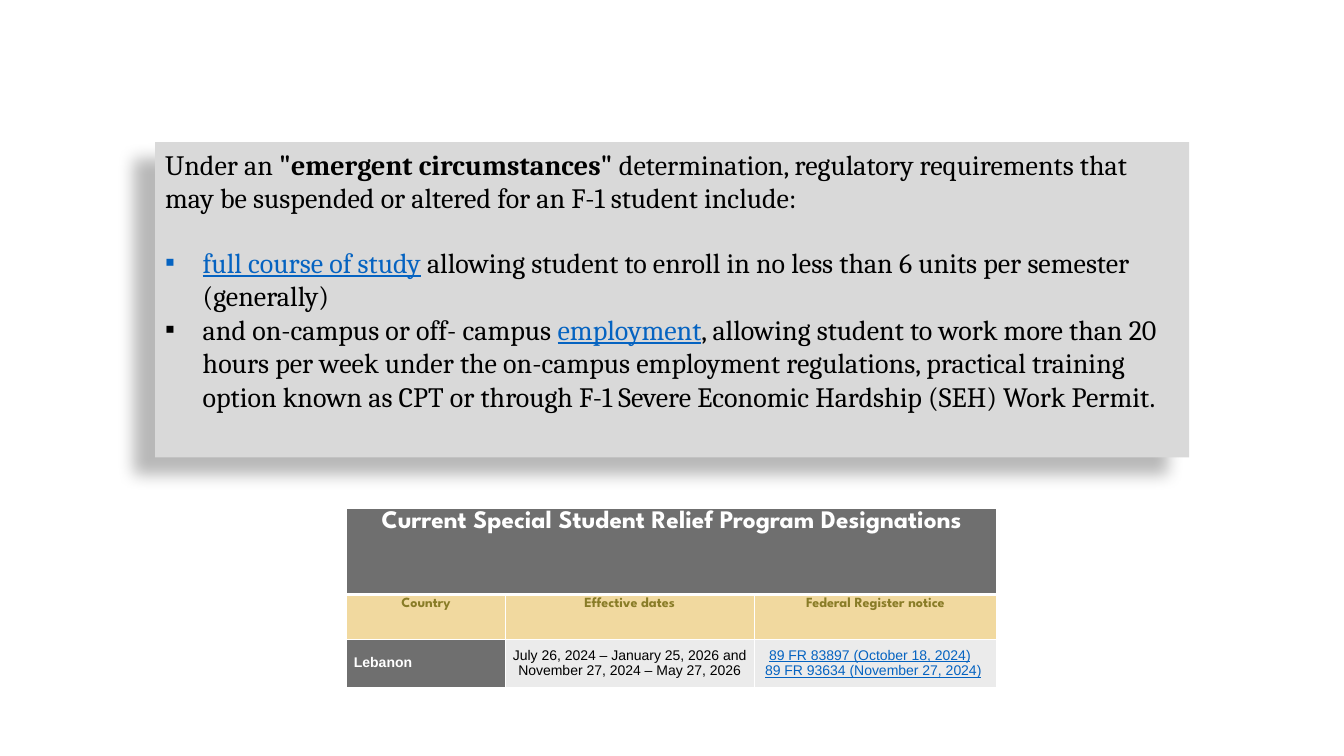
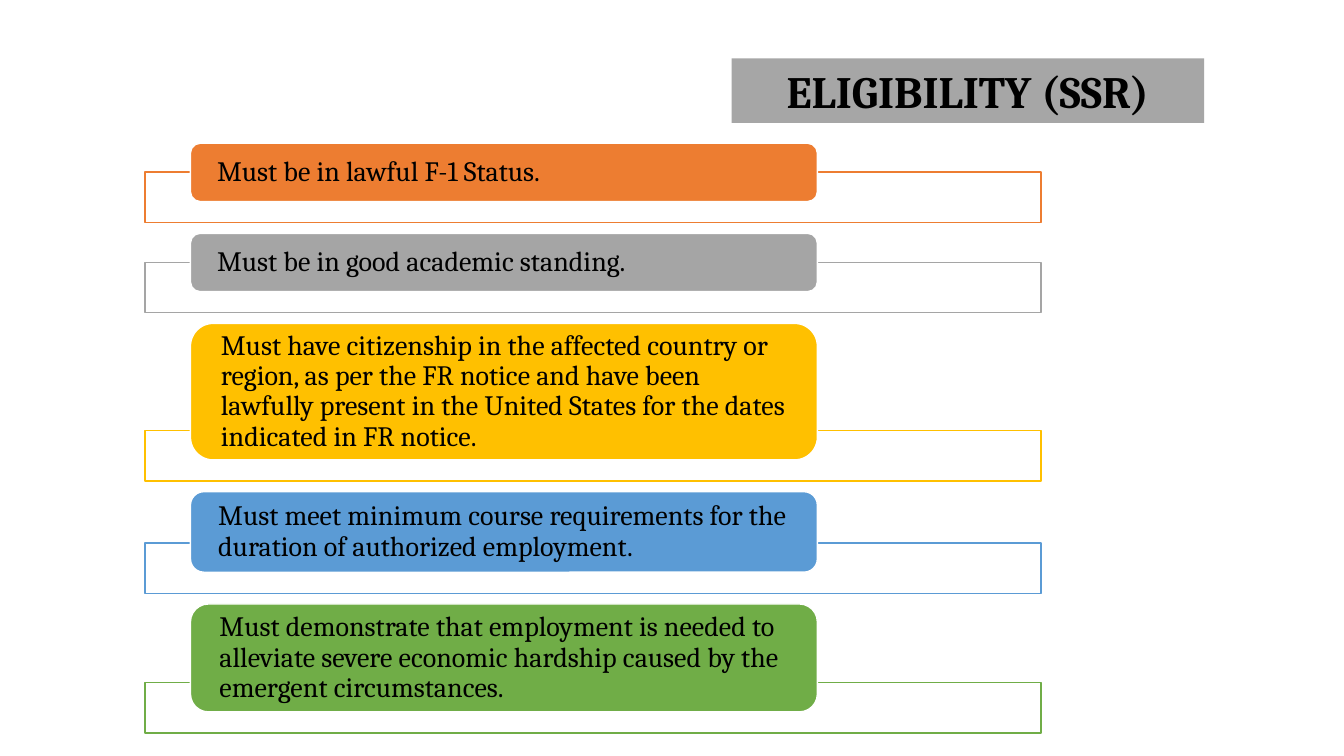
from lxml.etree import SubElement
from pptx import Presentation
from pptx.dml.color import RGBColor
from pptx.enum.shapes import MSO_SHAPE
from pptx.enum.text import MSO_ANCHOR, PP_ALIGN
from pptx.oxml import parse_xml
from pptx.oxml.ns import nsdecls, qn
from pptx.util import Cm, Pt

BLACK = RGBColor(0x00, 0x00, 0x00)
WHITE = RGBColor(0xFF, 0xFF, 0xFF)
LINK = RGBColor(0x05, 0x63, 0xC1)
PANEL = RGBColor(0xD9, 0xD9, 0xD9)
BAND = RGBColor(0xA6, 0xA6, 0xA6)
DARK = RGBColor(0x6F, 0x6F, 0x6F)
SAND = RGBColor(0xF1, 0xD9, 0x9F)
OLIVE = RGBColor(0x89, 0x7C, 0x27)
PALE = RGBColor(0xEB, 0xEB, 0xEB)
ORANGE = RGBColor(0xED, 0x7D, 0x31)
GREY = RGBColor(0xA5, 0xA5, 0xA5)
GOLD = RGBColor(0xFF, 0xC0, 0x00)
BLUE = RGBColor(0x5B, 0x9B, 0xD5)
GREEN = RGBColor(0x70, 0xAD, 0x47)

SERIF, SANS, HEAD = "Cambria", "Arial", "League Spartan"
LEFT, CENTER = PP_ALIGN.LEFT, PP_ALIGN.CENTER
TOP, MIDDLE = MSO_ANCHOR.TOP, MSO_ANCHOR.MIDDLE


class Deck:
    """Holds the deck style and the current slide."""

    def __init__(self):
        self.prs = Presentation()
        self.prs.slide_width, self.prs.slide_height = Cm(33.87), Cm(19.05)
        self.slide = None

    def page(self):
        self.slide = self.prs.slides.add_slide(self.prs.slide_layouts[6])

    def shape(self, kind, x, y, w, h, fill, line=None):
        shape = self.slide.shapes.add_shape(kind, Cm(x), Cm(y), Cm(w), Cm(h))
        shape.shadow.inherit = False
        shape.fill.solid()
        shape.fill.fore_color.rgb = fill
        if line is None:
            shape.line.fill.background()
        else:
            shape.line.color.rgb = line
            shape.line.width = Pt(1)
        return shape

    def shadow(self, shape):
        effects = shape.element.spPr.find(qn("a:effectLst"))
        effects.append(parse_xml(
            f'<a:outerShdw {nsdecls("a")} blurRad="{Pt(11.8)}" dist="{Pt(19.7)}"'
            f' dir="{141 * 60000}" algn="tr" rotWithShape="0">'
            '<a:srgbClr val="000000"><a:alpha val="28000"/></a:srgbClr></a:outerShdw>'))

    def bullet(self, par):
        props = par._p.get_or_add_pPr()
        props.set("marL", str(Cm(0.95)))
        props.set("indent", str(-Cm(0.95)))
        SubElement(props, qn("a:buFont")).set("typeface", SANS)
        SubElement(props, qn("a:buChar")).set("char", "▪")

    def run(self, par, text, size, font, color=BLACK, bold=False, under=False):
        run = par.add_run()
        run.text = text
        run.font.size, run.font.name = Pt(size), font
        run.font.color.rgb = color
        run.font.bold, run.font.underline = bold, under

    def text(self, frame, lines, size, font, align=LEFT):
        frame.word_wrap = True
        pars = []
        for i, runs in enumerate(lines):
            par = frame.add_paragraph() if i else frame.paragraphs[0]
            par.alignment = align
            for words, *look in runs:
                self.run(par, words, size, font, *look)
            pars.append(par)
        return pars

    def panel(self, x, y, w, h, intro, points):
        box = self.shape(MSO_SHAPE.RECTANGLE, x, y, w, h, PANEL)
        self.shadow(box)
        box.text_frame.vertical_anchor = TOP
        first, *rest = self.text(box.text_frame, [intro, *points], 20, SERIF)
        first.space_after = Pt(22)
        for par in rest:
            self.bullet(par)

    def title(self, x, y, w, h, text):
        box = self.shape(MSO_SHAPE.RECTANGLE, x, y, w, h, BAND)
        self.text(box.text_frame, [[(text, BLACK, True)]], 32, SERIF, CENTER)

    def step(self, y, h, color, text):
        self.shape(MSO_SHAPE.RECTANGLE, 3.66, y + h - 0.74, 22.58, 1.27, WHITE, color)
        pill = self.shape(MSO_SHAPE.ROUNDED_RECTANGLE, 4.8, y, 15.8, h, color, WHITE)
        frame = pill.text_frame
        frame.margin_left = frame.margin_right = Cm(0.6)
        frame.margin_top = frame.margin_bottom = 0
        for par in self.text(frame, [[(text,)]], 20, SERIF):
            par.line_spacing = 0.9

    def table(self, x, y, cols, rows):
        frame = self.slide.shapes.add_table(
            len(rows), len(cols), Cm(x), Cm(y), Cm(sum(cols)), Cm(sum(rows)))
        table = frame.table
        table.first_row = table.horz_banding = False
        for col, width in zip(table.columns, cols):
            col.width = Cm(width)
        for row, height in zip(table.rows, rows):
            row.height = Cm(height)
        return table

    def edges(self, cell, top, bottom):
        props = cell._tc.get_or_add_tcPr()
        widths = {"lnL": 0.64, "lnR": 0.64, "lnT": top, "lnB": bottom}
        for i, (side, width) in enumerate(widths.items()):
            props.insert(i, parse_xml(
                f'<a:{side} {nsdecls("a")} w="{Pt(width)}"><a:solidFill>'
                f'<a:srgbClr val="{WHITE}"/></a:solidFill></a:{side}>'))

    def cell(self, cell, fill, lines, size, font, align=CENTER,
             anchor=TOP, top=0.64, bottom=0.64):
        cell.fill.solid()
        cell.fill.fore_color.rgb = fill
        cell.margin_left = cell.margin_right = Cm(0.18)
        cell.margin_top = cell.margin_bottom = Cm(0.08)
        cell.vertical_anchor = anchor
        self.edges(cell, top, bottom)
        return self.text(cell.text_frame, lines, size, font, align)


def relief(deck):
    deck.page()
    deck.panel(
        3.91, 3.58, 26.06, 7.95,
        [("Under an ",), ('"emergent circumstances"', BLACK, True),
         (" determination, regulatory requirements that may be suspended or altered"
          " for an F-1 student include:",)],
        [[("full course of study", LINK, False, True),
          (" allowing student to enroll in no less than 6 units per semester (generally)",)],
         [("and on-campus or off- campus ",), ("employment", LINK, False, True),
          (", allowing student to work more than 20 hours per week under the on-campus"
           " employment regulations, practical training option known as CPT or through"
           " F-1 Severe Economic Hardship (SEH) Work Permit.",)]])

    table = deck.table(8.74, 12.8, [3.99, 6.27, 6.12], [2.18, 1.12, 1.22])
    table.cell(0, 0).merge(table.cell(0, 2))
    deck.cell(table.cell(0, 0), DARK,
              [[("Current Special Student Relief Program Designations", WHITE, True)]],
              18, HEAD, bottom=1.93)
    for i, name in enumerate(["Country", "Effective dates", "Federal Register notice"]):
        deck.cell(table.cell(1, i), SAND, [[(name, OLIVE, True)]], 10, HEAD, top=1.93)
    deck.cell(table.cell(2, 0), DARK, [[("Lebanon", WHITE, True)]], 10, SANS, LEFT, MIDDLE)
    deck.cell(table.cell(2, 1), PALE,
              [[("July 26, 2024 – January 25, 2026 and",)],
               [("November 27, 2024 – May 27, 2026",)]], 10, SANS, CENTER, MIDDLE)
    links = deck.cell(table.cell(2, 2), PALE,
                      [[("89 FR 83897 (October 18, 2024)", LINK, False, True)],
                       [("89 FR 93634 (November 27, 2024)", LINK, False, True)]],
                      10, SANS, LEFT, MIDDLE)
    for par, indent in zip(links, [0.2, 0.1]):
        par._p.get_or_add_pPr().set("marL", str(Cm(indent)))


def rules(deck):
    deck.page()
    deck.title(18.44, 1.47, 11.91, 1.63, "ELIGIBILITY (SSR)")
    steps = [
        (1.47, ORANGE, "Must be in lawful F-1 Status."),
        (1.47, GREY, "Must be in good academic standing."),
        (3.44, GOLD, "Must have citizenship in the affected country or region, as per the"
                     " FR notice and have been lawfully present in the United States for"
                     " the dates indicated in FR notice."),
        (2.03, BLUE, "Must meet minimum course requirements for the duration of"
                     " authorized employment."),
        (2.72, GREEN, "Must demonstrate that employment is needed to alleviate severe"
                      " economic hardship caused by the emergent circumstances."),
    ]
    y = 3.61
    for height, color, text in steps:
        deck.step(y, height, color, text)
        y += height + 0.8


def main():
    deck = Deck()
    relief(deck)
    rules(deck)
    deck.prs.save("out.pptx")


if __name__ == "__main__":
    main()
